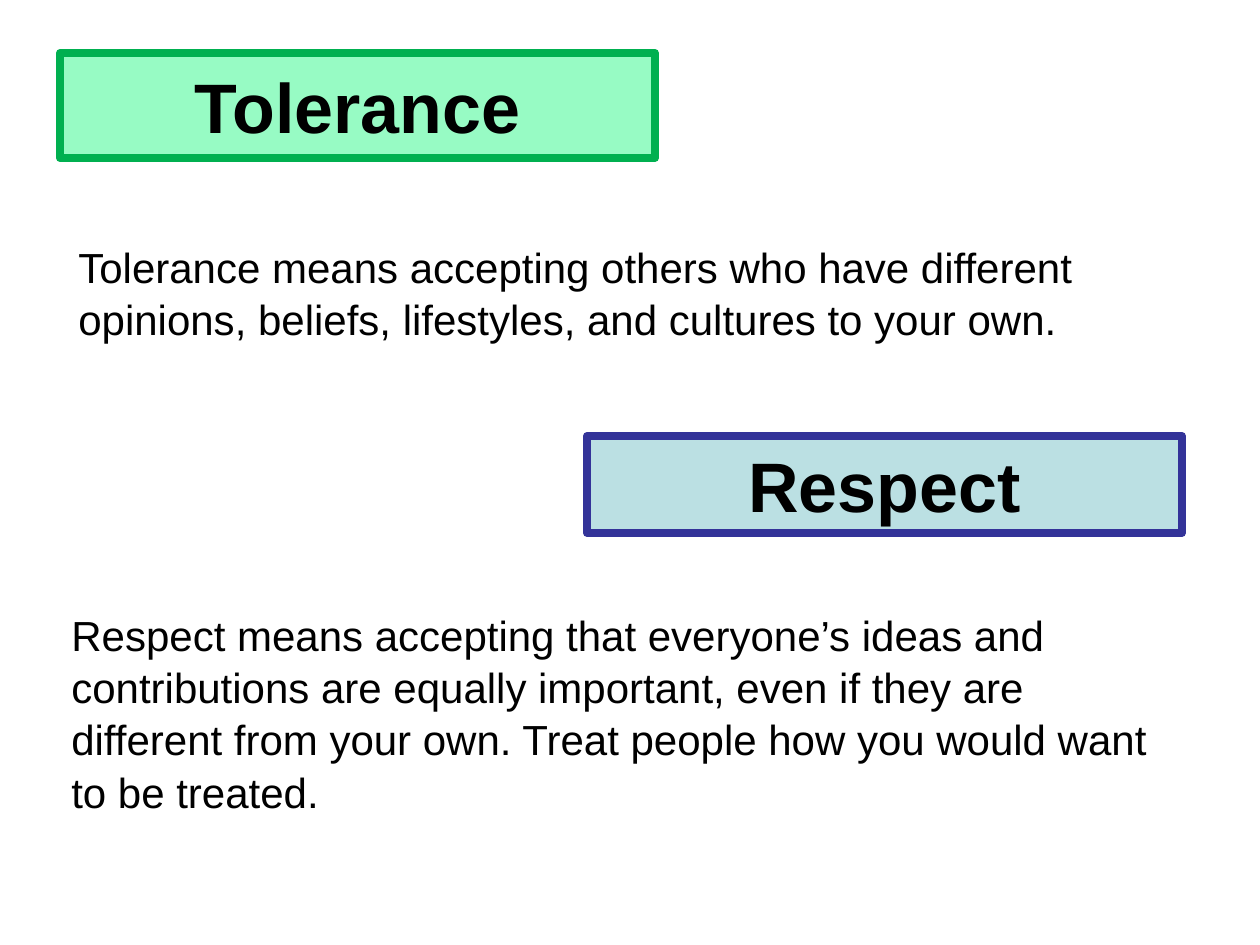
from pptx import Presentation
from pptx.dml.color import RGBColor
from pptx.enum.shapes import MSO_SHAPE as Shape
from pptx.enum.text import MSO_ANCHOR as Anchor, MSO_AUTO_SIZE as Fit, PP_ALIGN as Align
from pptx.oxml.ns import qn
from pptx.util import Pt
from lxml.etree import SubElement

PX = 914400 // 126
FONT = "Arial"
COLORS = {
    "text": "000000",
    "green": "97FBC4", "green_line": "00B050",
    "blue": "BBE0E3", "blue_line": "333399",
}

# Content: heading, its place and colour, then the meaning and its box
HEAD_W, HEAD_H, BODY_W = 595, 97, 1124
TERMS = [
    ("Tolerance", (60, 57), "green",
     "Tolerance means accepting others who have different opinions, "
     "beliefs, lifestyles, and cultures to your own.",
     (66, 233), 123),
    ("Respect", (587, 436), "blue",
     "Respect means accepting that everyone’s ideas and contributions are "
     "equally important, even if they are different from your own. "
     "Treat people how you would want to be treated.",
     (59, 601), 179),
]


def color(name):
    return RGBColor.from_string(COLORS[name])


def place(shape, spot, w, h):
    shape.left, shape.top = (n * PX for n in spot)
    shape.width, shape.height = w * PX, h * PX


def write(shape, text, size, bold, align, anchor, fit):
    frame = shape.text_frame
    frame.word_wrap = True
    frame.auto_size = fit
    frame.vertical_anchor = anchor
    para = frame.paragraphs[0]
    para.text = text
    para.alignment = align
    font = para.font
    font.name, font.size, font.bold = FONT, Pt(size), bold
    font.color.rgb = color("text")
    return para


def add_head(shape, text, spot, tint):
    place(shape, spot, HEAD_W, HEAD_H)
    shape.fill.solid()
    shape.fill.fore_color.rgb = color(tint)
    shape.line.color.rgb = color(tint + "_line")
    shape.line.width = Pt(4.5)
    SubElement(shape.line._get_or_add_ln(), qn("a:round"))
    write(shape, text, 40, True, Align.CENTER, Anchor.MIDDLE, Fit.SHAPE_TO_FIT_TEXT)


def add_body(shapes, text, spot, h):
    box = shapes.add_textbox(0, 0, PX, PX)
    place(box, spot, BODY_W, h)
    para = write(box, text, 24, False, Align.LEFT, Anchor.TOP, Fit.NONE)
    para.line_spacing = 1.04


def main():
    deck = Presentation()
    deck.slide_width, deck.slide_height = 1260 * PX, 945 * PX
    shapes = deck.slides.add_slide(deck.slide_layouts[5]).shapes

    # The first heading is the slide title
    for i, (head, spot, tint, body, body_spot, body_h) in enumerate(TERMS):
        if i == 0:
            box = shapes.title
        else:
            box = shapes.add_shape(Shape.RECTANGLE, 0, 0, PX, PX)
            box.shadow.inherit = False
        add_head(box, head, spot, tint)
        add_body(shapes, body, body_spot, body_h)

    deck.save("out.pptx")


if __name__ == "__main__":
    main()
